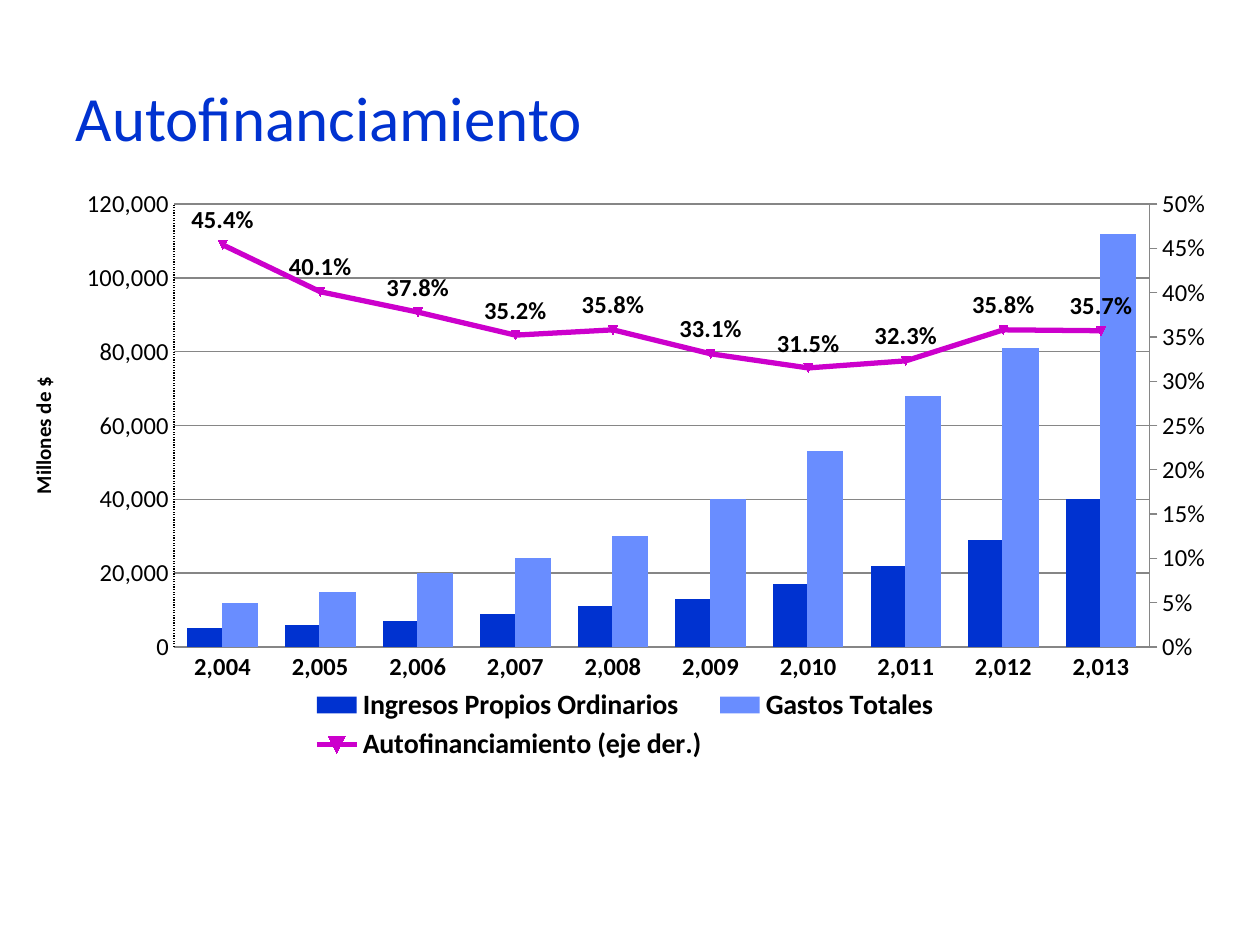
from pptx import Presentation
from pptx.chart.axis import ValueAxis
from pptx.chart.data import CategoryChartData
from pptx.dml.color import RGBColor
from pptx.enum.chart import (XL_CHART_TYPE, XL_LABEL_POSITION, XL_LEGEND_POSITION,
                             XL_MARKER_STYLE, XL_TICK_MARK)
from pptx.enum.dml import MSO_LINE
from pptx.enum.text import MSO_ANCHOR, PP_ALIGN
from pptx.oxml import parse_xml
from pptx.oxml.ns import nsdecls, qn
from pptx.util import Cm, Pt

BLUE = RGBColor(0x00, 0x32, 0xD0)
LIGHT_BLUE = RGBColor(0x69, 0x8D, 0xFF)
MAGENTA = RGBColor(0xCC, 0x00, 0xCC)
BLACK = RGBColor(0x00, 0x00, 0x00)
GRAY = RGBColor(0x86, 0x86, 0x86)
FONT = "Calibri"

YEARS = range(2004, 2014)
INCOME = [5000, 6000, 7000, 9000, 11000, 13000, 17000, 22000, 29000, 40000]
EXPENSES = [12000, 15000, 20000, 24000, 30000, 40000, 53000, 68000, 81000, 112000]
RATIO = [0.454, 0.401, 0.378, 0.352, 0.358, 0.331, 0.315, 0.323, 0.358, 0.357]

LINE_PLOT = f"""<c:lineChart {nsdecls("c")}>
  <c:grouping val="standard"/><c:varyColors val="0"/>
  <c:marker val="1"/><c:axId val="5001"/><c:axId val="5002"/>
</c:lineChart>"""
RIGHT_CAT_AXIS = f"""<c:catAx {nsdecls("c")}>
  <c:axId val="5001"/><c:scaling><c:orientation val="minMax"/></c:scaling>
  <c:delete val="1"/><c:axPos val="b"/><c:crossAx val="5002"/><c:crosses val="autoZero"/>
</c:catAx>"""
RIGHT_VAL_AXIS = f"""<c:valAx {nsdecls("c")}>
  <c:axId val="5002"/><c:scaling><c:orientation val="minMax"/></c:scaling>
  <c:delete val="0"/><c:axPos val="r"/><c:numFmt formatCode="0%" sourceLinked="0"/>
  <c:majorTickMark val="out"/><c:minorTickMark val="none"/><c:tickLblPos val="nextTo"/>
  <c:crossAx val="5001"/><c:crosses val="max"/>
</c:valAx>"""
PLOT_LAYOUT = f"""<c:layout {nsdecls("c")}><c:manualLayout>
  <c:layoutTarget val="inner"/><c:xMode val="edge"/><c:yMode val="edge"/>
  <c:x val="0.127"/><c:y val="0.045"/><c:w val="0.807"/><c:h val="0.751"/>
</c:manualLayout></c:layout>"""


def style_font(font, size, bold=False, color=BLACK):
    font.name = FONT
    font.size = Pt(size)
    font.bold = bold
    font.color.rgb = color


def style_line(line, color, width):
    line.color.rgb = color
    line.width = Pt(width)


def remove_children(parent, tag):
    for child in parent.findall(qn(tag)):
        parent.remove(child)


def add_title(s):
    title = s.shapes.title
    title.left, title.top, title.width, title.height = Cm(1.27), Cm(0.76), Cm(22.86), Cm(3.18)
    tf = title.text_frame
    tf.text = "Autofinanciamiento"
    tf.vertical_anchor = MSO_ANCHOR.MIDDLE
    p = tf.paragraphs[0]
    p.alignment = PP_ALIGN.LEFT
    style_font(p.runs[0].font, 36, color=BLUE)


def style_value_axis(axis, maximum, step, number_format, tick):
    axis.minimum_scale = 0
    axis.maximum_scale = maximum
    axis.major_unit = step
    axis.major_tick_mark = tick
    axis.tick_labels.number_format = number_format
    axis.tick_labels.number_format_is_linked = False
    style_font(axis.tick_labels.font, 14)
    style_line(axis.format.line, GRAY, 0.75)


def style_left_axes(chart):
    cat_axis = chart.category_axis
    cat_axis.major_tick_mark = XL_TICK_MARK.NONE
    style_font(cat_axis.tick_labels.font, 14, True)
    style_line(cat_axis.format.line, GRAY, 0.75)
    val_axis = chart.value_axis
    style_value_axis(val_axis, 120000, 20000, "#,##0", XL_TICK_MARK.NONE)
    style_line(val_axis.format.line, BLACK, 0.75)
    val_axis.format.line.dash_style = MSO_LINE.ROUND_DOT
    style_line(val_axis.major_gridlines.format.line, GRAY, 0.75)
    tf = val_axis.axis_title.text_frame
    tf.text = "Millones de $"
    style_font(tf.paragraphs[0].runs[0].font, 12, True)


def move_last_series_to_right_axis(chart):
    bars = chart.plots[0]
    ser = list(bars.series)[-1]._element
    remove_children(ser, "c:invertIfNegative")
    line_plot = parse_xml(LINE_PLOT)
    line_plot.insert(2, ser)
    bars._element.addnext(line_plot)
    right_axis = parse_xml(RIGHT_VAL_AXIS)
    chart.value_axis._element.addnext(right_axis)
    right_axis.addnext(parse_xml(RIGHT_CAT_AXIS))
    style_value_axis(ValueAxis(right_axis), 0.5, 0.05, "0%", XL_TICK_MARK.OUTSIDE)


def style_ratio_line(plot):
    ratio = plot.series[0]
    ratio.smooth = False
    style_line(ratio.format.line, MAGENTA, 3)
    marker = ratio.marker
    marker.style = XL_MARKER_STYLE.AUTOMATIC
    marker.size = 5
    marker.format.fill.solid()
    marker.format.fill.fore_color.rgb = MAGENTA
    marker.format.line.color.rgb = MAGENTA
    labels = ratio.data_labels
    labels.show_value = True
    labels.position = XL_LABEL_POSITION.ABOVE
    labels.number_format = "0.0%"
    labels.number_format_is_linked = False
    style_font(labels.font, 14, True)


def add_financing_chart(s):
    data = CategoryChartData()
    data.categories = YEARS
    data.categories.number_format = "#,##0"
    data.add_series("Ingresos Propios Ordinarios", INCOME, "#,##0")
    data.add_series("Gastos Totales", EXPENSES, "#,##0")
    data.add_series("Autofinanciamiento (eje der.)", RATIO, "0.0%")
    chart = s.shapes.add_chart(XL_CHART_TYPE.COLUMN_CLUSTERED, Cm(0.41), Cm(3.58),
                               Cm(24.38), Cm(11.89), data).chart
    style_font(chart.font, 10)
    chart.has_title = False
    chart.has_legend = True
    chart.legend.position = XL_LEGEND_POSITION.BOTTOM
    chart.legend.include_in_layout = False
    style_font(chart.legend.font, 16, True)
    style_left_axes(chart)
    move_last_series_to_right_axis(chart)
    bars, line = chart.plots
    bars.vary_by_categories = False
    bars.gap_width = 75
    bars.overlap = 5
    for series, color in zip(bars.series, (BLUE, LIGHT_BLUE)):
        series.format.fill.solid()
        series.format.fill.fore_color.rgb = color
    style_ratio_line(line)
    plot_area = bars._element.getparent()
    remove_children(plot_area, "c:layout")
    plot_area.insert(0, parse_xml(PLOT_LAYOUT))


def main():
    prs = Presentation()
    prs.slide_width, prs.slide_height = Cm(25.4), Cm(19.05)
    s = prs.slides.add_slide(prs.slide_layouts[5])
    add_title(s)
    add_financing_chart(s)
    prs.save("out.pptx")


if __name__ == "__main__":
    main()
